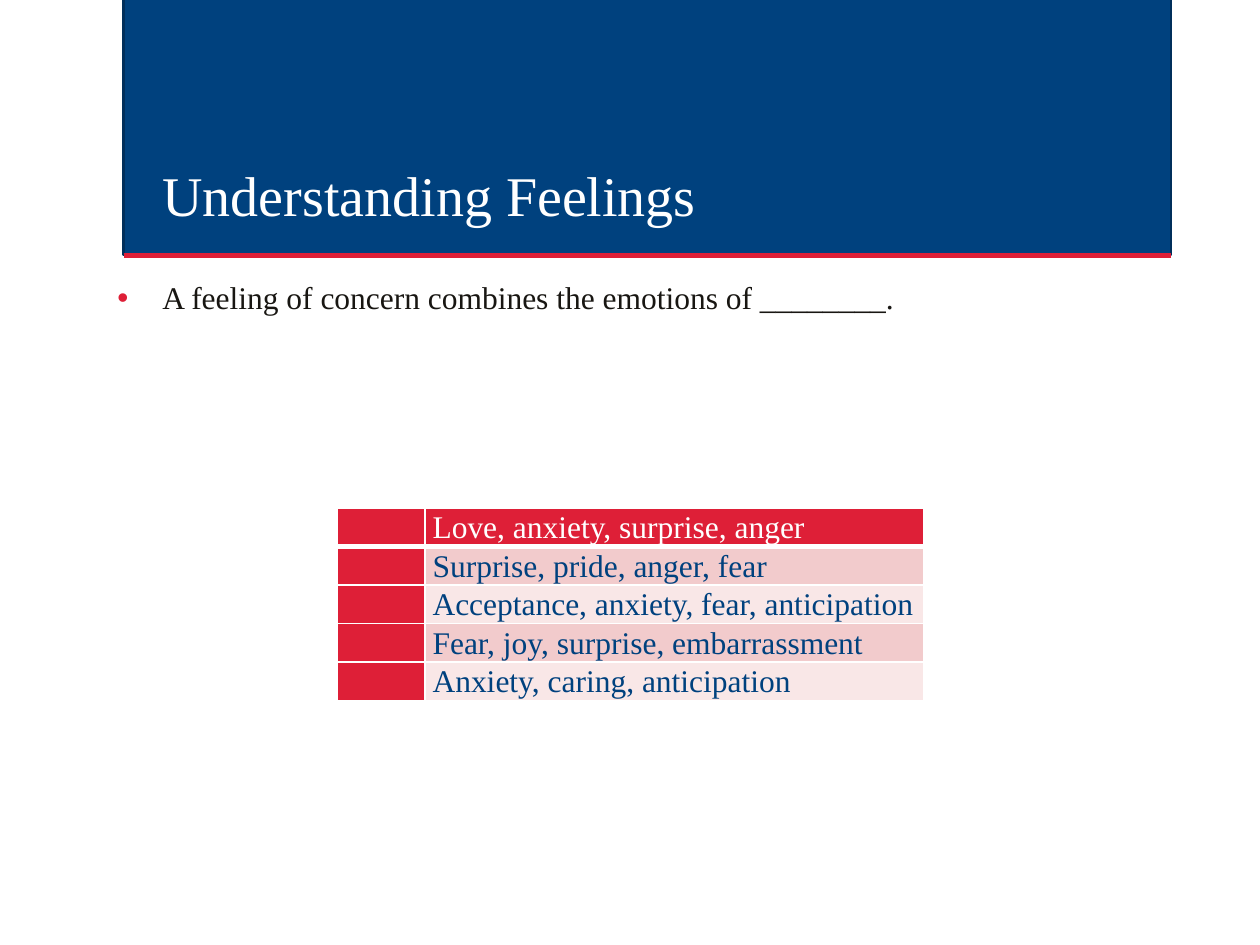
"""Build the "Understanding Feelings" quiz slide with its answer table."""
from dataclasses import dataclass

from lxml.etree import SubElement
from pptx import Presentation
from pptx.dml.color import RGBColor as Rgb
from pptx.enum.shapes import MSO_CONNECTOR as Connector, MSO_SHAPE as Shape
from pptx.enum.text import MSO_ANCHOR as Anchor, MSO_AUTO_SIZE as AutoSize, PP_ALIGN as Align
from pptx.oxml.ns import qn
from pptx.util import Cm, Pt

TITLE = "Understanding Feelings"
QUESTION = "A feeling of concern combines the emotions of ________."
ANSWERS = [
    "Love, anxiety, surprise, anger",
    "Surprise, pride, anger, fear",
    "Acceptance, anxiety, fear, anticipation",
    "Fear, joy, surprise, embarrassment",
    "Anxiety, caring, anticipation",
]


@dataclass(frozen=True)
class Theme:
    """Colours, font and type sizes of the slide."""
    navy: str = "00417E"
    navy_edge: str = "002F5B"
    red: str = "DE1F37"
    rose: str = "F2CBCC"
    blush: str = "F9E7E7"
    white: str = "FFFFFF"
    ink: str = "181612"
    font: str = "Times New Roman"
    title_size: int = 32
    text_size: int = 18


THEME = Theme()


def write(para, text, size, color, spacing):
    """Add one styled run to a left-aligned paragraph."""
    para.alignment = Align.LEFT
    para.line_spacing = spacing
    span = para.add_run()
    span.text = text
    span.font.name = THEME.font
    span.font.size = Pt(size)
    span.font.color.rgb = Rgb.from_string(color)


def place(box, left, top, width, height, anchor):
    """Move a placeholder and return its first paragraph."""
    box.left, box.top, box.width, box.height = Cm(left), Cm(top), Cm(width), Cm(height)
    frame = box.text_frame
    frame.word_wrap = True
    frame.auto_size = AutoSize.NONE
    frame.vertical_anchor = anchor
    return frame.paragraphs[0]


def add_bullet(para):
    """Give a paragraph a hanging red bullet."""
    props = para._p.get_or_add_pPr()
    props.set("marL", str(Cm(1.27)))
    props.set("indent", str(Cm(-0.91)))
    SubElement(SubElement(props, qn("a:buClr")), qn("a:srgbClr"), val=THEME.red)
    SubElement(props, qn("a:buFont"), typeface="Arial")
    SubElement(props, qn("a:buChar"), char="•")


def add_banner(page):
    """Draw the title band and its red rule behind the placeholders."""
    left, top, width, height = Cm(2.49), Cm(-0.05), Cm(21.12), Cm(5.2)
    band = page.shapes.add_shape(Shape.RECTANGLE, left, top, width, height)
    band.shadow.inherit = False
    band.fill.solid()
    band.fill.fore_color.rgb = Rgb.from_string(THEME.navy)
    band.line.color.rgb = Rgb.from_string(THEME.navy_edge)
    band.line.width = Pt(1.25)
    base = top + height
    rule = page.shapes.add_connector(Connector.STRAIGHT, left, base, left + width, base)
    rule.line.color.rgb = Rgb.from_string(THEME.red)
    rule.line.width = Pt(2.5)
    SubElement(rule._element.spPr, qn("a:effectLst"))
    for index, shape in enumerate((band, rule), start=2):
        page.shapes._spTree.insert(index, shape._element)


def style_cell(cell, fill, bottom_width):
    """Set white borders, a plain fill and tight margins."""
    cell.margin_left = cell.margin_right = Cm(0.15)
    cell.margin_top = cell.margin_bottom = 0
    props = cell._tc.get_or_add_tcPr()
    for side, width in (("L", 1), ("R", 1), ("T", 1), ("B", bottom_width)):
        edge = SubElement(props, qn(f"a:ln{side}"), w=str(Pt(width)))
        paint = SubElement(edge, qn("a:solidFill"))
        SubElement(paint, qn("a:srgbClr"), val=THEME.white)
    cell.fill.solid()
    cell.fill.fore_color.rgb = Rgb.from_string(fill)


def add_answers(page):
    """Add the answer table with a red key column and banded rows."""
    columns, row_height = (Cm(1.77), Cm(10.05)), Cm(0.76)
    table = page.shapes.add_table(
        len(ANSWERS), len(columns), Cm(6.8), Cm(10.24), sum(columns), row_height * len(ANSWERS)
    ).table
    for column, width in zip(table.columns, columns):
        column.width = width
    for index, answer in enumerate(ANSWERS):
        table.rows[index].height = row_height
        header = index == 0
        band = THEME.red if header else (THEME.blush, THEME.rose)[index % 2]
        key, choice = table.cell(index, 0), table.cell(index, 1)
        for cell, fill in ((key, THEME.red), (choice, band)):
            style_cell(cell, fill, 3 if header else 1)
        color = THEME.white if header else THEME.navy
        write(choice.text_frame.paragraphs[0], answer, THEME.text_size, color, 1.07)


def main():
    """Assemble and save the deck."""
    deck = Presentation()
    deck.slide_width, deck.slide_height = Cm(25.4), Cm(19.05)
    page = deck.slides.add_slide(deck.slide_layouts[1])
    add_banner(page)
    title = place(page.shapes.title, 3.02, 2.24, 20.02, 2.49, Anchor.BOTTOM)
    write(title, TITLE, THEME.title_size, THEME.white, 0.9)
    question = place(page.placeholders[1], 1.75, 5.33, 22, 7.57, Anchor.TOP)
    write(question, QUESTION, THEME.text_size, THEME.ink, 1.2)
    question.space_before = Pt(7.5)
    add_bullet(question)
    add_answers(page)
    deck.save("out.pptx")


if __name__ == "__main__":
    main()
